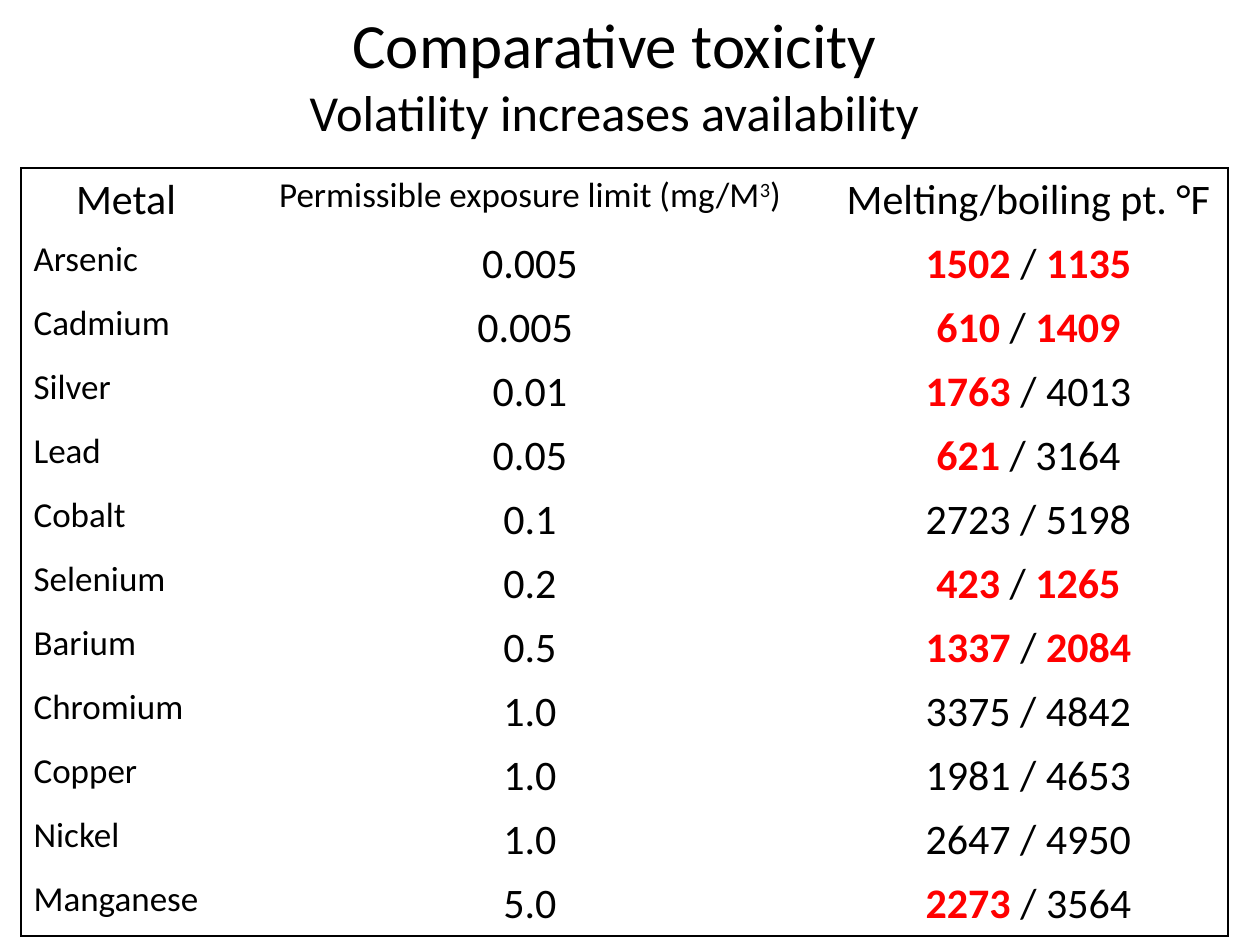
from lxml.etree import SubElement
from pptx import Presentation
from pptx.dml.color import RGBColor
from pptx.enum.text import MSO_ANCHOR, MSO_AUTO_SIZE, PP_ALIGN
from pptx.oxml.ns import qn
from pptx.util import Pt

TITLE = "Comparative toxicity"
SUBTITLE = "Volatility increases availability"
HEADINGS = ("Metal", ("Permissible exposure limit (mg/M", "3", ")"), "Melting/boiling pt. °F")
# metal, exposure limit, melting point, boiling point, how many of the points are highlighted
METALS = [
    ("Arsenic", "0.005", "1502", "1135", 2),
    ("Cadmium", "0.005 ", "610", "1409", 2),
    ("Silver", "0.01", "1763", "4013", 1),
    ("Lead", "0.05", "621", "3164", 1),
    ("Cobalt", "0.1", "2723", "5198", 0),
    ("Selenium", "0.2", "423", "1265", 2),
    ("Barium", "0.5", "1337", "2084", 2),
    ("Chromium", "1.0", "3375", "4842", 0),
    ("Copper", "1.0", "1981", "4653", 0),
    ("Nickel", "1.0", "2647", "4950", 0),
    ("Manganese", "5.0", "2273", "3564", 1),
]

THEME = {
    "font": "Calibri",
    "ink": "000000", "hot": "FF0000",
    "title": 36, "subtitle": 28.8, "large": 24, "small": 20,
    "border": 1,
}

PX = 914400 // 126
SLIDE = (1260, 945)
TITLE_BOX = {"left": 32, "top": 0, "width": 1165, "height": 147}
TABLE_LEFT, TABLE_TOP = 21, 168
COLUMNS = (210, 598, 399)
ROW_HEIGHT = 64
HANGING = 48


def add_run(paragraph, text, size, color="ink", bold=False, superscript=False):
    run = paragraph.add_run()
    run.text = text
    formats = {"name": THEME["font"], "size": Pt(THEME[size]), "bold": bold}
    for attribute, value in formats.items():
        setattr(run.font, attribute, value)
    run.font.color.rgb = RGBColor.from_string(THEME[color])
    if superscript:
        run._r.get_or_add_rPr().set("baseline", "30000")


def start_cell(cell, align):
    """Set the hanging indent and alignment, and return the paragraph to fill."""
    paragraph = cell.text_frame.paragraphs[0]
    properties = paragraph._p.get_or_add_pPr()
    properties.set("marL", str(HANGING * PX))
    properties.set("indent", str(-HANGING * PX))
    paragraph.alignment = align
    return paragraph


def outline_cell(cell, sides):
    """Draw the given sides (letters of LRTB) and clear the others and the fill."""
    properties = cell._tc.get_or_add_tcPr()
    for side in "LRTB":
        drawn = side in sides
        line = SubElement(properties, qn(f"a:ln{side}"), w=str(Pt(THEME["border"]) if drawn else 0))
        if drawn:
            SubElement(SubElement(line, qn("a:solidFill")), qn("a:srgbClr"), val=THEME["ink"])
        else:
            SubElement(line, qn("a:noFill"))
    cell.fill.background()


def add_title(slide):
    title = slide.shapes.title
    for attribute, value in TITLE_BOX.items():
        setattr(title, attribute, value * PX)
    frame = title.text_frame
    frame.auto_size = MSO_AUTO_SIZE.NONE
    frame.vertical_anchor = MSO_ANCHOR.MIDDLE
    paragraph = frame.paragraphs[0]
    paragraph.alignment = PP_ALIGN.CENTER
    add_run(paragraph, TITLE, "title")
    paragraph.add_line_break()
    add_run(paragraph, SUBTITLE, "subtitle")


def fill_headings(table):
    metal, limit, points = (start_cell(cell, PP_ALIGN.CENTER) for cell in table.rows[0].cells)
    add_run(metal, HEADINGS[0], "large")
    for part, text in enumerate(HEADINGS[1]):
        add_run(limit, text, "small", superscript=part == 1)
    add_run(points, HEADINGS[2], "large")


def fill_metal(cells, name, limit, melting, boiling, hot_count):
    add_run(start_cell(cells[0], PP_ALIGN.JUSTIFY), name, "small")
    add_run(start_cell(cells[1], PP_ALIGN.CENTER), limit, "large")
    points = start_cell(cells[2], PP_ALIGN.CENTER)
    for position, (text, separator) in enumerate(((melting, " / "), (boiling, ""))):
        hot = position < hot_count
        add_run(points, text, "large", "hot" if hot else "ink", hot)
        if separator:
            add_run(points, separator, "large")


def add_metals(slide):
    row_count, column_count = len(METALS) + 1, len(COLUMNS)
    table = slide.shapes.add_table(
        row_count, column_count, TABLE_LEFT * PX, TABLE_TOP * PX,
        sum(COLUMNS) * PX, row_count * ROW_HEIGHT * PX).table
    table.first_row = table.horz_banding = False
    for column, width in zip(table.columns, COLUMNS):
        column.width = width * PX

    fill_headings(table)
    for row, metal in enumerate(METALS, 1):
        fill_metal(table.rows[row].cells, *metal)

    for row in range(row_count):
        for column in range(column_count):
            on_edge = {"L": column == 0, "R": column == column_count - 1,
                       "T": row == 0, "B": row == row_count - 1}
            outline_cell(table.cell(row, column), [side for side, edge in on_edge.items() if edge])


def main():
    deck = Presentation()
    deck.slide_width, deck.slide_height = (length * PX for length in SLIDE)
    slide = deck.slides.add_slide(deck.slide_layouts[5])
    add_title(slide)
    add_metals(slide)
    deck.save("out.pptx")


if __name__ == "__main__":
    main()
